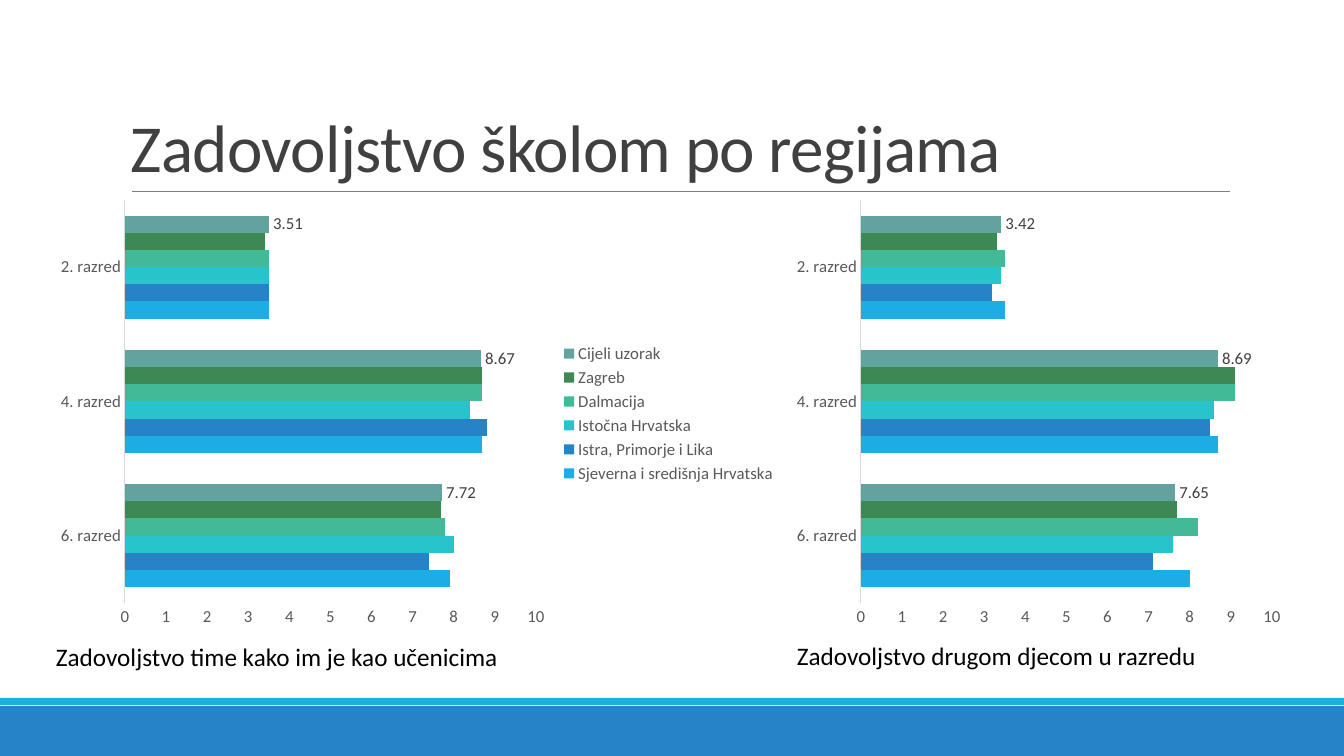
from lxml import etree
from pptx import Presentation, util as u
from pptx.chart.data import CategoryChartData
from pptx.dml.color import RGBColor
from pptx.enum import chart as ch, shapes, text
from pptx.oxml import parse_xml
from pptx.oxml.ns import nsdecls, qn

PX = 12192000 / 1344
FONT = "Calibri"
COLORS = {
    "blue": "2683C6", "sky": "1CADE4", "rule": "808080", "axis": "D9D9D9",
    "title": "404040", "label": "595959", "black": "000000",
    "Sjeverna i središnja Hrvatska": "1CADE4",
    "Istra, Primorje i Lika": "2683C6",
    "Istočna Hrvatska": "28C4CC",
    "Dalmacija": "42BA97",
    "Zagreb": "3E8853",
    "Cijeli uzorak": "62A39F",
}
REGIONS = list(COLORS)[-6:]
GRADES = ["6. razred", "4. razred", "2. razred"]
PLOT_TOP, PLOT_WIDTH, PLOT_HEIGHT = 200, 411, 403
CHART_TOP, CHART_HEIGHT = 191, 445

CHARTS = [
    dict(left=46, width=741, plot_left=125, legend=True, caption_top=636,
         caption="Zadovoljstvo time kako im je kao učenicima",
         values=[(7.9, 8.7, 3.5), (7.4, 8.8, 3.5), (8, 8.4, 3.5),
                 (7.8, 8.7, 3.5), (7.7, 8.7, 3.4), (7.72, 8.67, 3.51)]),
    dict(left=787, width=504, plot_left=861, legend=False, caption_top=635,
         caption="Zadovoljstvo drugom djecom u razredu",
         values=[(8, 8.7, 3.5), (7.1, 8.5, 3.2), (7.6, 8.6, 3.4),
                 (8.2, 9.1, 3.5), (7.7, 9.1, 3.3), (7.65, 8.69, 3.42)]),
]


def style_font(font, size, color):
    font.name = FONT
    font.size = u.Pt(size)
    font.color.rgb = RGBColor.from_string(COLORS[color])


def add_text(words, box, size, color, anchor):
    frame = slide.shapes.add_textbox(*[round(n * PX) for n in box]).text_frame
    frame.word_wrap = True
    frame.vertical_anchor = anchor
    paragraph = frame.paragraphs[0]
    paragraph.text = words
    style_font(paragraph.font, size, color)
    return paragraph


presentation = Presentation()
presentation.slide_width = round(1344 * PX)
presentation.slide_height = round(756 * PX)
slide = presentation.slides.add_slide(presentation.slide_layouts[6])

for color, top, height in [("blue", 706, 50), ("sky", 698, 7)]:
    band = slide.shapes.add_shape(
        shapes.MSO_SHAPE.RECTANGLE, 0, round(top * PX), round(1344 * PX), round(height * PX))
    band.shadow.inherit = False
    band.fill.solid()
    band.fill.fore_color.rgb = RGBColor.from_string(COLORS[color])
    band.line.fill.background()

rule = slide.shapes.add_connector(
    shapes.MSO_CONNECTOR.STRAIGHT, *[round(n * PX) for n in (132, 191, 1230, 191)])
rule.line.color.rgb = RGBColor.from_string(COLORS["rule"])
rule.line.width = u.Pt(0.5)
etree.SubElement(rule._element.spPr, qn("a:effectLst"))

title = add_text("Zadovoljstvo školom po regijama", (121, 31, 1109, 160),
                 48, "title", text.MSO_ANCHOR.BOTTOM)
title.line_spacing = 0.85
title.runs[0].font._element.set("spc", "-50")

for item in CHARTS:
    data = CategoryChartData()
    data.categories = GRADES
    for region, values in zip(REGIONS, item["values"]):
        data.add_series(region, values)
    box = item["left"], CHART_TOP, item["width"], CHART_HEIGHT
    chart = slide.shapes.add_chart(
        ch.XL_CHART_TYPE.BAR_CLUSTERED, *[round(n * PX) for n in box], data).chart
    style_font(chart.font, 12, "black")
    chart.has_title = False

    plot = chart.plots[0]
    plot.gap_width = 182
    plot.overlap = 0
    plot.vary_by_categories = False
    for series in plot.series:
        series.format.fill.solid()
        series.format.fill.fore_color.rgb = RGBColor.from_string(COLORS[series.name])
    labels = series.data_labels
    labels.show_value = True
    labels.position = ch.XL_LABEL_POSITION.OUTSIDE_END
    style_font(labels.font, 12, "title")

    for axis in (chart.category_axis, chart.value_axis):
        axis.major_tick_mark = axis.minor_tick_mark = ch.XL_TICK_MARK.NONE
        axis.has_major_gridlines = False
        style_font(axis.tick_labels.font, 12, "label")
    chart.category_axis.format.line.color.rgb = RGBColor.from_string(COLORS["axis"])
    chart.category_axis.format.line.width = u.Pt(0.75)
    chart.value_axis.format.line.fill.background()
    chart.value_axis.minimum_scale = 0
    chart.value_axis.maximum_scale = 10
    chart.value_axis.major_unit = 1

    chart.has_legend = item["legend"]
    if item["legend"]:
        chart.legend.position = ch.XL_LEGEND_POSITION.RIGHT
        chart.legend.include_in_layout = False
        style_font(chart.legend.font, 12, "label")

    area = chart._chartSpace.chart.plotArea
    for old in area.findall(qn("c:layout")):
        area.remove(old)
    fractions = {
        "x": (item["plot_left"] - item["left"]) / item["width"],
        "y": (PLOT_TOP - CHART_TOP) / CHART_HEIGHT,
        "w": PLOT_WIDTH / item["width"],
        "h": PLOT_HEIGHT / CHART_HEIGHT,
    }
    area.insert(0, parse_xml(
        f'<c:layout {nsdecls("c")}><c:manualLayout><c:layoutTarget val="inner"/>'
        '<c:xMode val="edge"/><c:yMode val="edge"/>'
        + "".join(f'<c:{key} val="{value:.4f}"/>' for key, value in fractions.items())
        + "</c:manualLayout></c:layout>"))

    add_text(item["caption"], (item["left"], item["caption_top"], 510, 40),
             18, "black", text.MSO_ANCHOR.TOP)

presentation.save("out.pptx")
